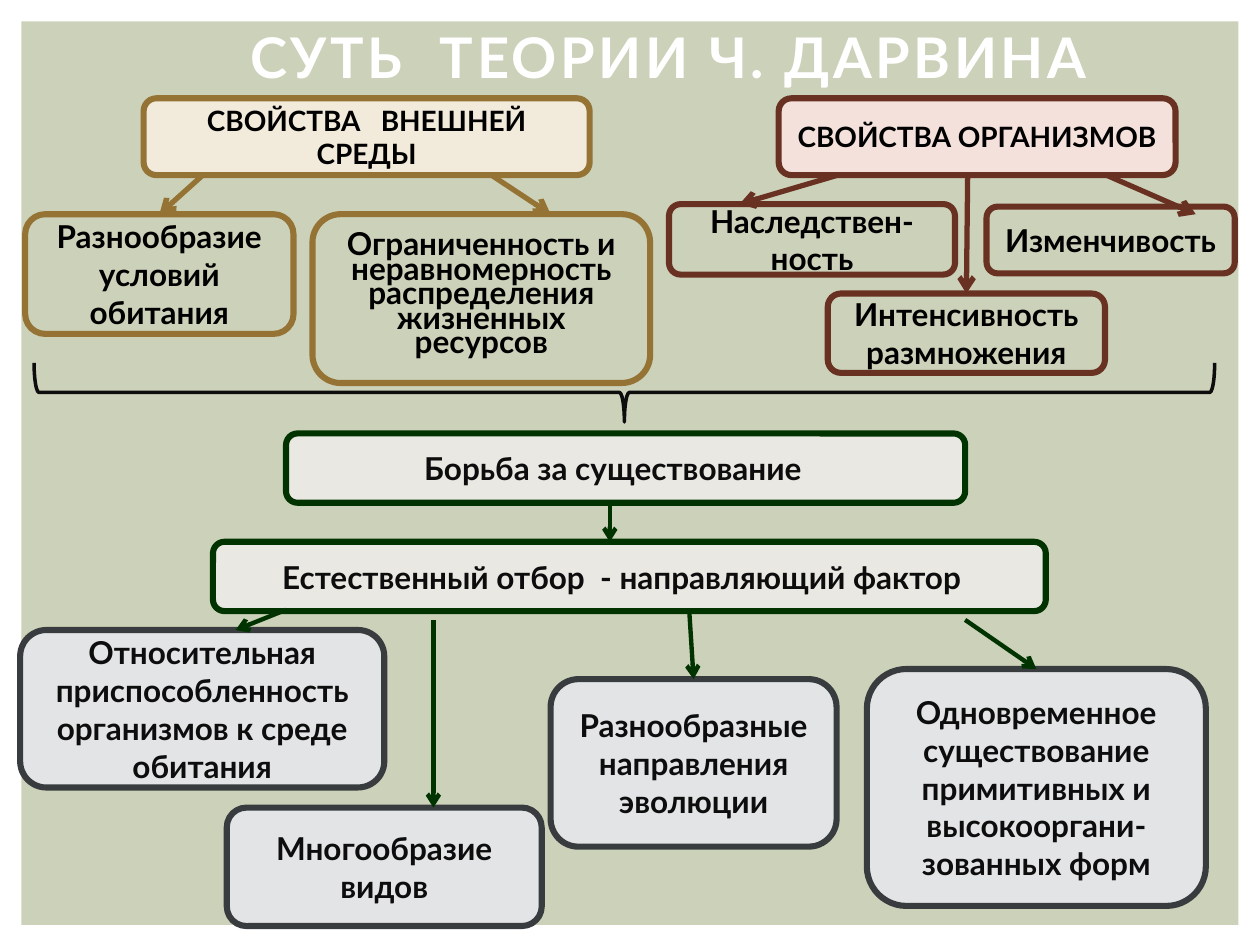
from pptx import Presentation
from pptx.dml.color import RGBColor
from pptx.enum.shapes import MSO_CONNECTOR, MSO_SHAPE
from pptx.enum.text import MSO_ANCHOR, PP_ALIGN
from pptx.oxml.ns import qn
from pptx.util import Inches, Pt
from lxml.etree import SubElement

COLORS = {
    "background": "CCD1B9",
    "white": "FFFFFF",
    "black": "000000",
    "ink": "0D0D0D",
    "environment": "947335",
    "environment_fill": "F2EADB",
    "organism": "693122",
    "organism_fill": "F4E1DC",
    "selection": "003300",
    "selection_fill": "E9E8E2",
    "result": "383C3F",
    "result_fill": "E2E4E5",
}
FONT = "Lato"
TOP = 0

BOXES = {
    "environment": ("СВОЙСТВА   ВНЕШНЕЙ СРЕДЫ", (1.14, 0.78, 3.54, 0.61),
                    "environment", "environment_fill", "black", 16),
    "organisms": ("СВОЙСТВА ОРГАНИЗМОВ", (6.18, 0.78, 3.15, 0.61),
                  "organism", "organism_fill", "black", 16),
    "resources": ("Ограниченность и неравномерность распределения жизненных ресурсов",
                  (2.48, 1.7, 2.68, 1.34), "environment", None, "black", 18),
    "habitats": ("Разнообразие условий обитания", (0.2, 1.7, 2.13, 0.95),
                 "environment", None, "black", 18),
    "heredity": ("Наследствен-ность", (5.31, 1.62, 2.27, 0.56),
                 "organism", None, "black", 18),
    "variability": ("Изменчивость", (7.83, 1.64, 1.97, 0.53),
                    "organism", None, "black", 18),
    "reproduction": ("Интенсивность размножения", (6.57, 2.33, 2.2, 0.63),
                     "organism", None, "black", 18),
    "struggle": ("Борьба за существование", (2.27, 3.44, 5.39, 0.55),
                 "selection", "selection_fill", "ink", 18),
    "selection": ("Естественный отбор  - направляющий фактор", (1.69, 4.3, 6.61, 0.55),
                  "selection", "selection_fill", "ink", 18),
    "adaptation": ("Относительная приспособленность организмов к среде обитания",
                   (0.16, 5, 2.89, 1.25), "result", "result_fill", "ink", 18),
    "species": ("Многообразие видов", (1.8, 6.41, 2.5, 0.94),
                "result", "result_fill", "ink", 18),
    "directions": ("Разнообразные направления эволюции", (4.37, 5.39, 2.27, 1.33),
                   "result", "result_fill", "ink", 18),
    "coexistence": ("Одновременное существование примитивных и высокооргани-зованных форм",
                    (6.88, 5.31, 2.69, 1.88), "result", "result_fill", "ink", 18),
}

ARROWS = [
    ((1.61, 1.39), (1.26, 1.7), "environment", 3, "habitats"),
    ((3.9, 1.39), (4.37, 1.7), "environment", 3, None),
    ((8.78, 1.39), (9.49, 1.7), "organism", 3, None),
    ((7.68, 1.39), (7.68, 2.33), "organism", 3, "reproduction"),
    ((6.65, 1.39), (5.87, 1.62), "organism", 3, None),
    ((4.84, 3.98), (4.84, 4.3), "selection", 2.5, None),
    ((7.66, 4.92), (8.22, 5.31), "selection", 2.5, "coexistence"),
    ((5.47, 4.84), (5.51, 5.39), "selection", 2.5, "directions"),
    ((3.44, 4.92), (3.44, 6.41), "selection", 2.5, None),
    ((2.27, 4.84), (1.87, 5), "selection", 2.5, None),
]


def rgb(name):
    return RGBColor.from_string(COLORS[name])


def apply_format(target, values):
    for attribute, value in values.items():
        setattr(target, attribute, value)


def write_text(holder, wording, color, size):
    frame = holder.text_frame
    apply_format(frame, {"word_wrap": True, "vertical_anchor": MSO_ANCHOR.MIDDLE})
    paragraph = frame.paragraphs[0]
    paragraph.alignment = PP_ALIGN.CENTER
    run = paragraph.add_run()
    run.text = wording
    apply_format(run.font, {"name": FONT, "size": Pt(size), "bold": True})
    run.font.color.rgb = rgb(color)
    return run


def add_outline(slide, preset, place, fill=None, line=None, width=0):
    outline = slide.shapes.add_shape(preset, *map(Inches, place))
    outline.shadow.inherit = False
    if fill:
        outline.fill.solid()
        outline.fill.fore_color.rgb = rgb(fill)
    else:
        outline.fill.background()
    if line:
        outline.line.color.rgb = rgb(line)
        outline.line.width = Pt(width)
    else:
        outline.line.fill.background()
    return outline


def add_title(slide):
    title = slide.shapes.add_textbox(*map(Inches, (0.62, 0.21, 9.38, 0.47)))
    run = write_text(title, "СУТЬ  ТЕОРИИ Ч. ДАРВИНА", "white", 32)
    run.font._element.set("spc", "200")


def add_box(slide, wording, place, line, fill, ink, size):
    box = add_outline(slide, MSO_SHAPE.ROUNDED_RECTANGLE, place, fill, line, 3.5)
    write_text(box, wording, ink, size)
    return box


def add_brace(slide):
    brace = add_outline(slide, MSO_SHAPE.RIGHT_BRACE, (4.72, -1.57, 0.47, 9.37),
                        line="ink", width=2)
    brace.rotation = 90


def add_arrow(slide, start, end, color, width, target):
    arrow = slide.shapes.add_connector(MSO_CONNECTOR.STRAIGHT, *map(Inches, start + end))
    if target:
        arrow.end_connect(target, TOP)
    arrow.line.color.rgb = rgb(color)
    arrow.line.width = Pt(width)
    SubElement(arrow.line._get_or_add_ln(), qn("a:tailEnd"), type="arrow")
    SubElement(arrow._element.spPr, qn("a:effectLst"))


def main():
    presentation = Presentation()
    apply_format(presentation, {"slide_width": Inches(10), "slide_height": Inches(7.5)})
    slide = presentation.slides.add_slide(presentation.slide_layouts[6])
    add_outline(slide, MSO_SHAPE.RECTANGLE, (0.17, 0.17, 9.66, 7.17), "background")
    add_title(slide)
    boxes = {key: add_box(slide, *details) for key, details in BOXES.items()}
    boxes["resources"].text_frame.paragraphs[0].line_spacing = Pt(14)
    boxes["struggle"].text_frame.margin_right = Inches(0.3)
    boxes["selection"].text_frame.margin_right = Inches(0.22)
    add_brace(slide)
    for start, end, color, width, target in ARROWS:
        add_arrow(slide, start, end, color, width, boxes.get(target))
    presentation.save("out.pptx")


if __name__ == "__main__":
    main()
